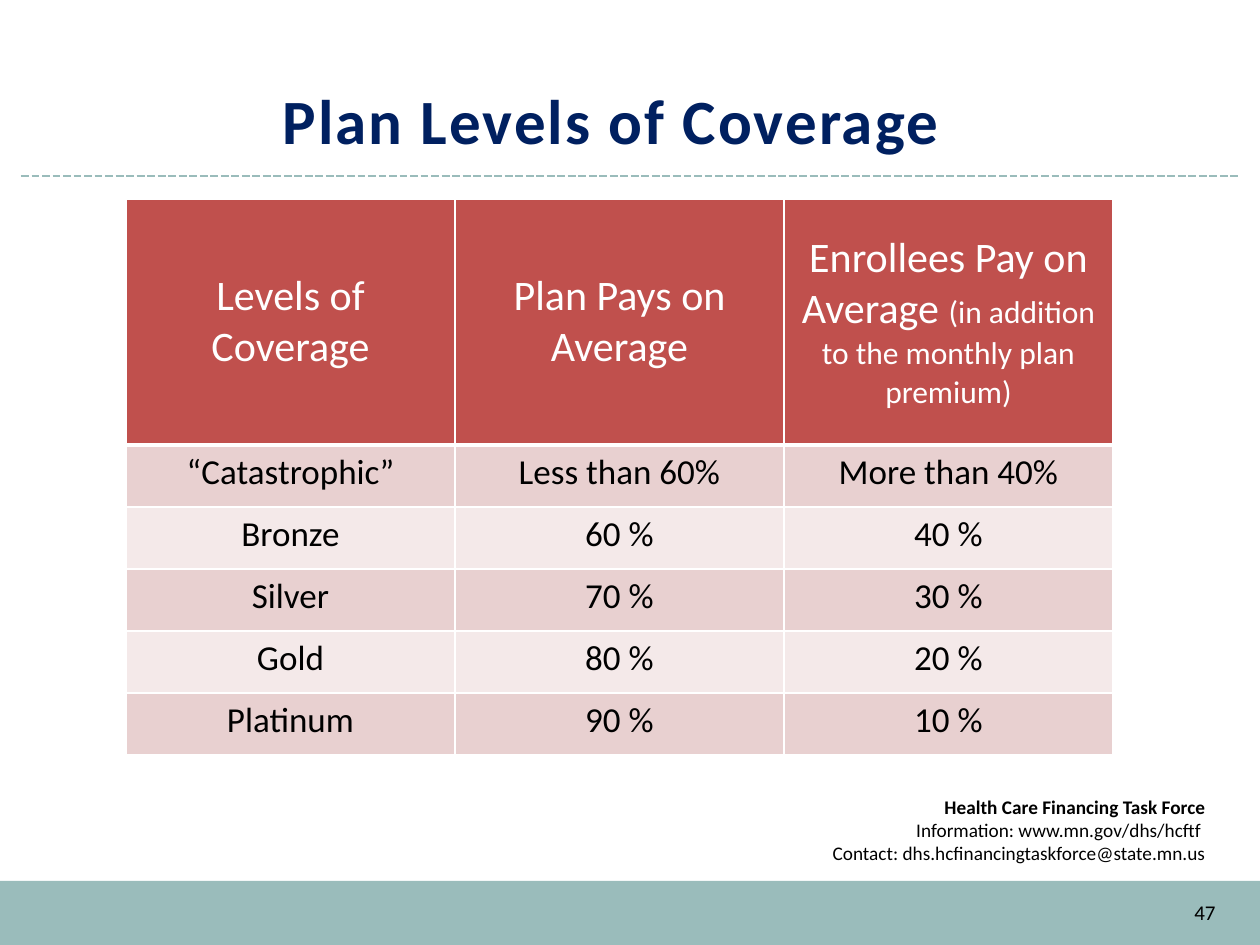
from dataclasses import dataclass
from typing import Any

from lxml import etree
from pptx import Presentation
from pptx.dml.color import RGBColor
from pptx.enum.dml import MSO_LINE
from pptx.enum.shapes import MSO_CONNECTOR, MSO_SHAPE
from pptx.enum.text import MSO_ANCHOR, PP_ALIGN
from pptx.oxml.ns import qn
from pptx.util import Emu, Pt

RECT = MSO_SHAPE.RECTANGLE
STRAIGHT = MSO_CONNECTOR.STRAIGHT
DASH = MSO_LINE.SQUARE_DOT
CENTER, RIGHT = PP_ALIGN.CENTER, PP_ALIGN.RIGHT
TOP, MIDDLE, BOTTOM = MSO_ANCHOR.TOP, MSO_ANCHOR.MIDDLE, MSO_ANCHOR.BOTTOM
SCALE = 914400 / 126


@dataclass(frozen=True)
class Theme:
    font: str = "Calibri"
    navy: str = "002060"
    teal: str = "9ABCBB"
    red: str = "C0504D"
    bands: tuple[str, str] = ("E8D0D0", "F4E9E9")
    white: str = "FFFFFF"
    black: str = "000000"
    title: int = 36
    header: int = 24
    body: int = 20
    note: int = 18
    number: int = 12
    contact: int = 11


@dataclass(frozen=True)
class Run:
    text: str
    size: int
    color: str
    bold: bool = False


@dataclass(frozen=True)
class Box:
    left: int
    top: int
    width: int
    height: int

    def emu(self) -> list[Emu]:
        return [px(n) for n in (self.left, self.top, self.width, self.height)]


THEME = Theme()
TITLE_BOX = Box(93, 38, 1036, 125)
BAND_BOX = Box(0, 881, 1260, 64)
CONTACT_BOX = Box(572, 789, 646, 84)
NUMBER_BOX = Box(1155, 887, 73, 50)
TABLE_BOX = Box(126, 199, 987, 557)
RULE_LEFT, RULE_RIGHT, RULE_TOP = 21, 1239, 176
HEADER_HEIGHT, ROW_HEIGHT = 246, 62

HEADERS = [
    [("Levels of Coverage", THEME.header)],
    [("Plan Pays on Average", THEME.header)],
    [("Enrollees Pay on Average ", THEME.header),
     ("(in addition to the monthly plan premium)", THEME.note)],
]
LEVELS = [
    ("“Catastrophic”", "Less than 60%", "More than 40%"),
    ("Bronze", "60 %", "40 %"),
    ("Silver", "70 %", "30 %"),
    ("Gold", "80 %", "20 %"),
    ("Platinum", "90 %", "10 %"),
]
CONTACT = [
    Run("Health Care Financing Task Force", THEME.contact, THEME.black, True),
    Run("Information: www.mn.gov/dhs/hcftf ", THEME.contact, THEME.black),
    Run("Contact: dhs.hcfinancingtaskforce@state.mn.us", THEME.contact, THEME.black),
]


def px(n: int) -> Emu:
    return Emu(round(n * SCALE))


def rgb(color: str) -> RGBColor:
    return RGBColor.from_string(color)


def write(tf: Any, paragraphs: list[list[Run]], align: PP_ALIGN) -> None:
    for i, runs in enumerate(paragraphs):
        p = tf.paragraphs[0] if i == 0 else tf.add_paragraph()
        p.alignment = align
        for run in runs:
            r = p.add_run()
            r.text = run.text
            values = {"name": THEME.font, "size": Pt(run.size), "bold": run.bold}
            for name, value in values.items():
                setattr(r.font, name, value)
            r.font.color.rgb = rgb(run.color)


def add_rect(slide: Any, box: Box, fill: str) -> Any:
    s = slide.shapes.add_shape(RECT, *box.emu())
    s.shadow.inherit = False
    s.fill.solid()
    s.fill.fore_color.rgb = rgb(fill)
    s.line.fill.background()
    return s


def add_rule(slide: Any) -> None:
    s = slide.shapes.add_connector(
        STRAIGHT, px(RULE_LEFT), px(RULE_TOP), px(RULE_RIGHT), px(RULE_TOP))
    s.line.color.rgb = rgb(THEME.teal)
    s.line.width = Pt(1.5)
    s.line.dash_style = DASH
    etree.SubElement(s._element.spPr, qn("a:effectLst"))


def add_title(slide: Any) -> None:
    s = slide.shapes.title
    s.left, s.top, s.width, s.height = TITLE_BOX.emu()
    tf = s.text_frame
    tf.vertical_anchor = BOTTOM
    write(tf, [[Run("Plan Levels of Coverage", THEME.title, THEME.navy, True)]], CENTER)
    p = tf.paragraphs[0]
    p.line_spacing = Pt(40)
    p.runs[0].font._element.set("spc", "120")


def set_borders(cell: Any, bottom: int) -> None:
    """Draw white edges, 1 pt except for the bottom; call before filling."""
    tc_pr = cell._tc.get_or_add_tcPr()
    for side, width in {"L": 1, "R": 1, "T": 1, "B": bottom}.items():
        ln = etree.SubElement(tc_pr, qn(f"a:ln{side}"), w=str(Pt(width)))
        fill = etree.SubElement(ln, qn("a:solidFill"))
        etree.SubElement(fill, qn("a:srgbClr"), val=THEME.white)


def fill_cell(cell: Any, runs: list[Run], fill: str, anchor: MSO_ANCHOR,
              bottom: int = 1) -> None:
    set_borders(cell, bottom)
    cell.fill.solid()
    cell.fill.fore_color.rgb = rgb(fill)
    cell.vertical_anchor = anchor
    write(cell.text_frame, [runs], CENTER)


def add_coverage_table(slide: Any) -> None:
    table = slide.shapes.add_table(
        len(LEVELS) + 1, len(HEADERS), *TABLE_BOX.emu()).table
    for column in table.columns:
        column.width = px(TABLE_BOX.width // len(HEADERS))
    for i, row in enumerate(table.rows):
        row.height = px(ROW_HEIGHT if i else HEADER_HEIGHT)
    for col, parts in enumerate(HEADERS):
        runs = [Run(text, size, THEME.white) for text, size in parts]
        fill_cell(table.cell(0, col), runs, THEME.red, MIDDLE, bottom=3)
    for i, level in enumerate(LEVELS):
        for col, text in enumerate(level):
            fill_cell(table.cell(i + 1, col), [Run(text, THEME.body, THEME.black)],
                      THEME.bands[i % 2], TOP)


def main() -> None:
    prs = Presentation()
    prs.slide_width, prs.slide_height = px(1260), px(945)
    slide = prs.slides.add_slide(prs.slide_layouts[5])
    add_title(slide)
    add_rect(slide, BAND_BOX, THEME.teal)
    add_rule(slide)

    contact = add_rect(slide, CONTACT_BOX, THEME.white).text_frame
    contact.vertical_anchor = TOP
    write(contact, [[run] for run in CONTACT], RIGHT)

    number = slide.shapes.add_textbox(*NUMBER_BOX.emu()).text_frame
    number.word_wrap = True
    number.vertical_anchor = MIDDLE
    write(number, [[Run("47", THEME.number, THEME.black)]], RIGHT)

    add_coverage_table(slide)
    prs.save("out.pptx")


if __name__ == "__main__":
    main()
